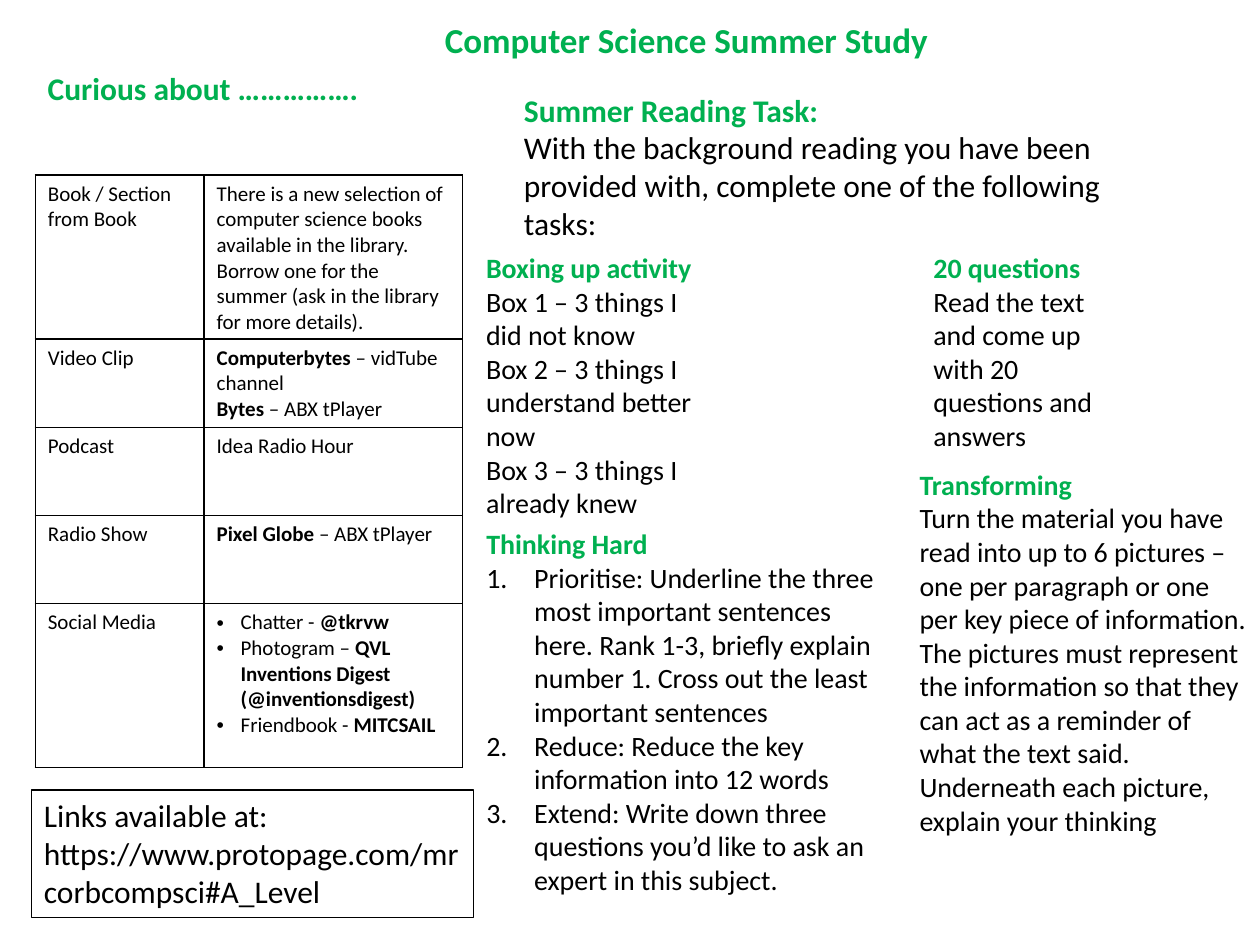
from dataclasses import dataclass

import pptx
import pptx.dml.color
import pptx.enum.shapes
import pptx.enum.text
import pptx.oxml.ns
import pptx.util
from lxml import etree

Inches = pptx.util.Inches
Pt = pptx.util.Pt
RGBColor = pptx.dml.color.RGBColor
qn = pptx.oxml.ns.qn

GREEN = RGBColor(0x00, 0xB0, 0x50)
BLACK = RGBColor(0x00, 0x00, 0x00)
FONT = "Calibri"


@dataclass
class Run:
    text: str
    bold: bool = False
    color: RGBColor = BLACK


@dataclass
class Para:
    runs: list[Run]
    bullet: str = ""
    indent: float = 0


@dataclass
class Section:
    box: tuple[float, float, float, float]
    size: int
    heading: str
    lines: tuple[str, ...] = ()
    numbered: bool = False


TITLE = Section((3.43, 0.1, 5.2, 0.44), 20, "Computer Science Summer Study")

THINKING = Section((3.76, 4.13, 3.44, 3.6), 16, "Thinking Hard", (
    "Prioritise: Underline the three most important sentences here. Rank 1-3, "
    "briefly explain number 1. Cross out the least important sentences",
    "Reduce: Reduce the key information into 12 words",
    "Extend: Write down three questions you’d like to ask an expert in this subject.",
), numbered=True)

SECTIONS = [
    Section((0.28, 0.5, 3.62, 0.4), 18, "Curious about ……………."),
    Section((4.06, 0.67, 5.28, 1.62), 18, "Summer Reading Task:", (
        "With the background reading you have been provided with, "
        "complete one of the following tasks:",)),
    Section((3.76, 1.94, 1.97, 3.1), 16, "Boxing up activity", (
        "Box 1 – 3 things I did not know",
        "Box 2 – 3 things I understand better now",
        "Box 3 – 3 things I already knew")),
    Section((7.31, 1.94, 1.57, 1.72), 16, "20 questions", (
        "Read the text and come up with 20 questions and answers",)),
    Section((7.2, 3.66, 2.8, 3.33), 16, "Transforming", (
        "Turn the material you have read into up to 6 pictures – one per paragraph "
        "or one per key piece of information. The pictures must represent the "
        "information so that they can act as a reminder of what the text said. "
        "Underneath each picture, explain your thinking",)),
]


def plain(text: str) -> list[Para]:
    return [Para([Run(text)])]


def social(site: str, account: str) -> Para:
    return Para([Run(site), Run(account, True)], "•", 0.19)


# Row height, label, details
RESOURCES = [
    (1.3, "Book / Section from Book", plain(
        "There is a new selection of computer science books available in the "
        "library. Borrow one for the summer (ask in the library for more details).")),
    (0.7, "Video Clip", [
        Para([Run("Computerbytes", True), Run(" – vidTube channel")]),
        Para([Run("Bytes", True), Run(" – ABX tPlayer")])]),
    (0.7, "Podcast", plain("Idea Radio Hour")),
    (0.7, "Radio Show", [
        Para([Run("Pixel Globe ", True), Run("– ABX tPlayer")])]),
    (1.3, "Social Media", [
        social("Chatter - ", "@tkrvw"),
        social("Photogram – ", "QVL Inventions Digest (@inventionsdigest)"),
        social("Friendbook - ", "MITCSAIL")]),
]


def set_bullet(p, para: Para) -> None:
    pPr = p._p.get_or_add_pPr()
    indent = Inches(para.indent)
    pPr.set("marL", str(indent))
    pPr.set("indent", str(-indent))
    if not para.bullet:
        etree.SubElement(pPr, qn("a:buNone"))
    elif para.bullet == "1.":
        etree.SubElement(pPr, qn("a:buFont"), typeface=FONT)
        etree.SubElement(pPr, qn("a:buAutoNum"), type="arabicPeriod")
    else:
        etree.SubElement(pPr, qn("a:buFont"), typeface="Arial")
        etree.SubElement(pPr, qn("a:buChar"), char=para.bullet)


def write(tf, paras: list[Para], size: int) -> None:
    for i, para in enumerate(paras):
        p = tf.add_paragraph() if i else tf.paragraphs[0]
        set_bullet(p, para)
        layout = {"alignment": pptx.enum.text.PP_ALIGN.LEFT,
                  "space_before": Pt(0), "space_after": Pt(0)}
        for name, value in layout.items():
            setattr(p, name, value)
        for run in para.runs:
            r = p.add_run()
            r.text = run.text
            style = {"name": FONT, "size": Pt(size), "bold": run.bold}
            for name, value in style.items():
                setattr(r.font, name, value)
            r.font.color.rgb = run.color


def fill_frame(sp, paras: list[Para], size: int) -> None:
    frame = {"word_wrap": True,
             "auto_size": pptx.enum.text.MSO_AUTO_SIZE.SHAPE_TO_FIT_TEXT,
             "vertical_anchor": pptx.enum.text.MSO_ANCHOR.TOP}
    for name, value in frame.items():
        setattr(sp.text_frame, name, value)
    write(sp.text_frame, paras, size)


def draw_section(sp, section: Section) -> None:
    for name, value in zip(("left", "top", "width", "height"), section.box):
        setattr(sp, name, Inches(value))
    bullet, indent = ("1.", 0.38) if section.numbered else ("", 0)
    paras = [Para([Run(section.heading, True, GREEN)])]
    paras += [Para([Run(line)], bullet, indent) for line in section.lines]
    fill_frame(sp, paras, section.size)


def set_borders(cell) -> None:
    tcPr = cell._tc.get_or_add_tcPr()
    for i, side in enumerate(("lnL", "lnR", "lnT", "lnB")):
        ln = etree.Element(qn(f"a:{side}"), w=str(Pt(1)))
        fill = etree.SubElement(ln, qn("a:solidFill"))
        etree.SubElement(fill, qn("a:srgbClr"), val=str(BLACK))
        tcPr.insert(i, ln)


def draw_resources(s) -> None:
    height = sum(row[0] for row in RESOURCES)
    table = s.shapes.add_table(len(RESOURCES), 2, Inches(0.28), Inches(1.39),
                               Inches(3.39), Inches(height)).table
    table.first_row = table.horz_banding = False
    for column, width in zip(table.columns, (1.34, 2.05)):
        column.width = Inches(width)
    for row, (row_height, label, details) in zip(table.rows, RESOURCES):
        row.height = Inches(row_height)
        for cell, paras in zip(row.cells, (plain(label), details)):
            cell.fill.background()
            set_borders(cell)
            write(cell.text_frame, paras, 12)


def draw_links(s) -> None:
    sp = s.shapes.add_shape(pptx.enum.shapes.MSO_SHAPE.RECTANGLE, Inches(0.25),
                            Inches(6.27), Inches(3.51), Inches(1.01))
    sp.shadow.inherit = False
    sp.fill.background()
    sp.line.color.rgb = BLACK
    sp.line.width = Pt(0.75)
    fill_frame(sp, plain("Links available at: "
                         "https://www.protopage.com/mrcorbcompsci#A_Level"), 18)


def main() -> None:
    prs = pptx.Presentation()
    prs.slide_width, prs.slide_height = Inches(10), Inches(7.5)
    s = prs.slides.add_slide(prs.slide_layouts[1])

    # Title and numbered list
    draw_section(s.shapes.title, TITLE)
    draw_section(s.placeholders[1], THINKING)

    # Task text boxes
    for section in SECTIONS:
        box = [Inches(value) for value in section.box]
        draw_section(s.shapes.add_textbox(*box), section)

    # Resource table and links
    draw_resources(s)
    draw_links(s)
    prs.save("out.pptx")


if __name__ == "__main__":
    main()
